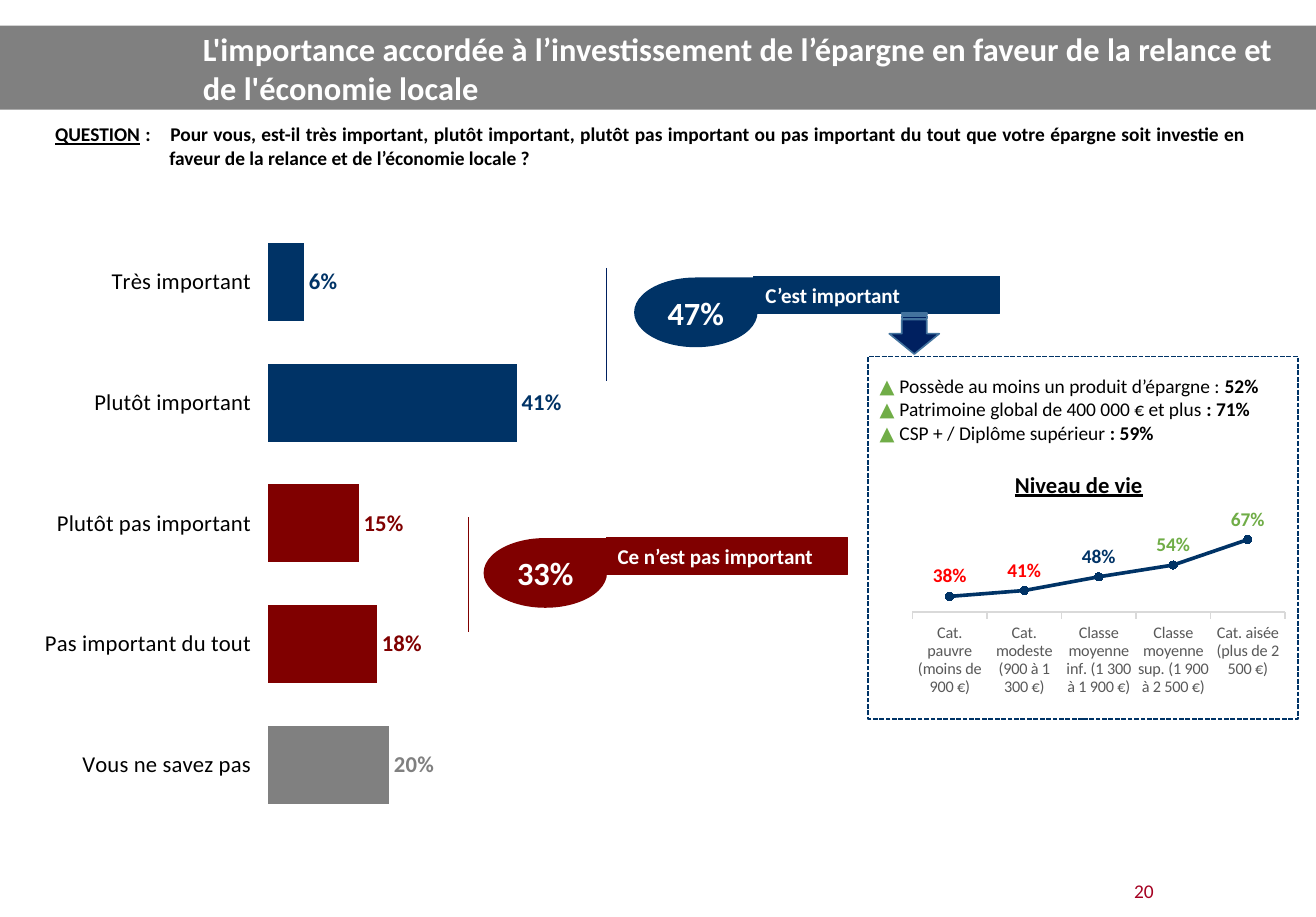
from lxml import etree
from pptx import Presentation
from pptx.chart.data import CategoryChartData
from pptx.dml.color import RGBColor
from pptx.enum.chart import XL_CHART_TYPE, XL_LABEL_POSITION, XL_MARKER_STYLE, XL_TICK_MARK
from pptx.enum.dml import MSO_LINE
from pptx.enum.shapes import MSO_CONNECTOR, MSO_SHAPE
from pptx.enum.text import MSO_ANCHOR, PP_ALIGN
from pptx.oxml.ns import qn
from pptx.util import Cm, Pt

BAR, LINE = XL_CHART_TYPE.BAR_CLUSTERED, XL_CHART_TYPE.LINE_MARKERS
OUTSIDE, ABOVE = XL_LABEL_POSITION.OUTSIDE_END, XL_LABEL_POSITION.ABOVE
CIRCLE, TICK_OUT, TICK_NONE = XL_MARKER_STYLE.CIRCLE, XL_TICK_MARK.OUTSIDE, XL_TICK_MARK.NONE
RECTANGLE, TEARDROP = MSO_SHAPE.RECTANGLE, MSO_SHAPE.TEAR
ARROW, STRAIGHT, DASH = MSO_SHAPE.STRIPED_RIGHT_ARROW, MSO_CONNECTOR.STRAIGHT, MSO_LINE.SQUARE_DOT
LEFT, CENTER, JUSTIFY = PP_ALIGN.LEFT, PP_ALIGN.CENTER, PP_ALIGN.JUSTIFY
TOP, MIDDLE = MSO_ANCHOR.TOP, MSO_ANCHOR.MIDDLE
NAVY, MAROON, GREY, GREEN, RED = "003366", "800000", "808080", "70AD47", "FF0000"
BLACK, WHITE = "000000", "FFFFFF"


def rgb(color):
    return RGBColor.from_string(color)


class SurveySlide:
    """Draws survey elements on one slide in a shared style."""

    def __init__(self, slide, font_name="Calibri"):
        self.slide = slide
        self.shapes = slide.shapes
        self.font_name = font_name

    def style_font(self, font, size, color, bold=False, underline=False, name=None):
        font.name = name or self.font_name
        font.size = Pt(size)
        font.bold = bold
        font.underline = underline
        font.color.rgb = rgb(color)

    def fill_text(self, shape, paragraphs, size, align=LEFT, anchor=TOP):
        frame = shape.text_frame
        frame.word_wrap = True
        frame.vertical_anchor = anchor
        for index, runs in enumerate(paragraphs):
            paragraph = frame.add_paragraph() if index else frame.paragraphs[0]
            paragraph.alignment = align
            for text, style in runs:
                run = paragraph.add_run()
                run.text = text
                self.style_font(run.font, size, **style)

    def text(self, box, paragraphs, size, align=LEFT, anchor=TOP):
        shape = self.shapes.add_textbox(*map(Cm, box))
        self.fill_text(shape, paragraphs, size, align, anchor)
        return shape.text_frame

    def shape(self, kind, box, fill, line=None, width=1):
        shape = self.shapes.add_shape(kind, *map(Cm, box))
        shape.shadow.inherit = False
        shape.fill.solid()
        shape.fill.fore_color.rgb = rgb(fill)
        if line:
            shape.line.color.rgb = rgb(line)
            shape.line.width = Pt(width)
        else:
            shape.line.fill.background()
        return shape

    def separator(self, x, top, bottom, color):
        connector = self.shapes.add_connector(STRAIGHT, Cm(x), Cm(top), Cm(x), Cm(bottom))
        connector.line.color.rgb = rgb(color)
        connector.line.width = Pt(0.5)
        etree.SubElement(connector._element.spPr, qn("a:effectLst"))

    def callout(self, label_box, label, drop_left, drop_top, total, color):
        style = dict(color=WHITE, bold=True)
        banner = self.shape(RECTANGLE, label_box, color, color, 0.75)
        self.fill_text(banner, [[(label, style)]], 13, anchor=MIDDLE)
        drop = self.shape(TEARDROP, (drop_left, drop_top, 2.69, 1.52), color)
        self.fill_text(drop, [[(total, style)]], 20, CENTER, MIDDLE)

    def chart(self, kind, box, data, layout, low, high, label_size, label_colors, position):
        chart_data = CategoryChartData(number_format="0%")
        chart_data.categories = [category for category, _ in data]
        chart_data.add_series("Series 1", [value for _, value in data])
        chart = self.shapes.add_chart(kind, *map(Cm, box), chart_data).chart
        self.style_font(chart.font, label_size, BLACK)
        chart.has_legend = chart.has_title = False
        self.place_plot(chart, layout)
        axis = chart.value_axis
        axis.visible = axis.has_major_gridlines = False
        axis.minimum_scale, axis.maximum_scale = low, high
        chart.category_axis.reverse_order = True
        chart.category_axis.major_tick_mark = TICK_OUT
        chart.category_axis.minor_tick_mark = TICK_NONE
        plot = chart.plots[0]
        plot.vary_by_categories = False
        series = plot.series[0]
        labels = series.data_labels
        labels.show_value = True
        labels.number_format, labels.number_format_is_linked = "0%", False
        labels.position = position
        self.style_font(labels.font, label_size, NAVY, True)
        for index, color in label_colors.items():
            label = series.points[index].data_label
            self.style_font(label.font, label_size, color, True)
            label.position = position
        return chart, plot, series

    def place_plot(self, chart, layout):
        area = chart._chartSpace.chart.plotArea
        for old in area.findall(qn("c:layout")):
            area.remove(old)
        element = etree.Element(qn("c:layout"))
        area.insert(0, element)
        manual = etree.SubElement(element, qn("c:manualLayout"))
        settings = [("layoutTarget", "inner"), ("xMode", "edge"), ("yMode", "edge")]
        for tag, value in settings + list(zip("xywh", layout)):
            etree.SubElement(manual, qn("c:" + tag)).set("val", str(value))

    def answer_chart(self, box, answers, colors):
        label_colors = {i: color for i, color in enumerate(colors) if color != NAVY}
        chart, plot, series = self.chart(
            BAR, box, answers, (0.3, 0, 0.62, 1), 0, 1, 14, label_colors, OUTSIDE)
        plot.gap_width = 55
        self.style_font(chart.category_axis.tick_labels.font, 14, BLACK)
        chart.category_axis.format.line.fill.background()
        for index, color in enumerate(colors):
            fill = series.points[index].format.fill
            fill.solid()
            fill.fore_color.rgb = rgb(color)

    def income_chart(self, box, incomes, label_colors):
        chart, plot, series = self.chart(
            LINE, box, incomes, (0.08, 0.17, 0.92, 0.38), 0.3, 0.7, 12, label_colors, ABOVE)
        self.style_font(chart.category_axis.tick_labels.font, 10, "595959")
        axis_line = chart.category_axis.format.line
        axis_line.color.rgb = rgb("D9D9D9")
        axis_line.width = Pt(0.75)
        series.smooth = False
        series.format.line.color.rgb = rgb(NAVY)
        series.format.line.width = Pt(2.25)
        marker = series.marker
        marker.style, marker.size = CIRCLE, 5
        marker.format.fill.solid()
        marker.format.fill.fore_color.rgb = rgb(NAVY)
        marker.format.line.color.rgb = rgb(NAVY)


def main():
    presentation = Presentation()
    presentation.slide_width, presentation.slide_height = Cm(28.68), Cm(19.99)
    page = SurveySlide(presentation.slides.add_slide(presentation.slide_layouts[6]))
    bold = dict(color=BLACK, bold=True)
    underlined = dict(bold, underline=True)

    page.shape(RECTANGLE, (0, 0.56, 28.68, 1.83), GREY)
    page.text((24.18, 19.05, 1.5, 0.76), [[("20", dict(color="A50021"))]], 12, CENTER)
    profile_box = page.shape(RECTANGLE, (18.92, 7.77, 9.37, 7.9), WHITE, NAVY)
    profile_box.line.dash_style = DASH
    title = ("L'importance accordée à l’investissement de l’épargne en faveur "
             "de la relance et de l'économie locale")
    page.text((4.17, 0.56, 24.08, 1.83), [[(title, dict(color=WHITE, bold=True))]], 20, anchor=MIDDLE)

    question = (" :\tPour vous, est-il très important, plutôt important, plutôt pas important "
                "ou pas important du tout que votre épargne soit investie en faveur de la "
                "relance et de l’économie locale ?")
    frame = page.text((0.97, 2.57, 27.1, 1.22),
                      [[("QUESTION", underlined), (question, bold)]], 12, JUSTIFY)
    frame.margin_left, frame.margin_right = Cm(0.23), Cm(0.91)
    frame.margin_top = frame.margin_bottom = Cm(0.1)
    properties = frame.paragraphs[0]._p.get_or_add_pPr()
    properties.set("marL", str(Cm(2.49)))
    properties.set("indent", str(-Cm(2.49)))

    answers = [("Très important ", 0.06), ("Plutôt important ", 0.41),
               ("Plutôt pas important ", 0.15), ("Pas important du tout ", 0.18),
               ("Vous ne savez pas ", 0.2)]
    page.answer_chart((-0.57, 4.83, 21.36, 13.16), answers, [NAVY, NAVY, MAROON, MAROON, GREY])

    page.separator(13.21, 5.84, 8.31, "002060")
    page.separator(10.21, 11.28, 13.77, MAROON)
    page.callout((16.43, 6.02, 5.36, 0.81), "C’est important", 13.82, 6.05, "47%", NAVY)
    page.callout((13.21, 11.71, 5.26, 0.81), "Ce n’est pas important", 10.54, 11.73, "33%", MAROON)

    incomes = [("Cat. aisée (plus de 2 500 €)", 0.67),
               ("Classe moyenne sup. (1 900 à 2 500 €)", 0.54),
               ("Classe moyenne inf. (1 300 à 1 900 €)", 0.48),
               ("Cat. modeste (900 à 1 300 €)", 0.41),
               ("Cat. pauvre (moins de 900 €)", 0.38)]
    page.income_chart((19.18, 10.87, 8.84, 4.5), incomes, {0: GREEN, 1: GREEN, 3: RED, 4: RED})

    profiles = [("Possède au moins un produit d’épargne : ", "52%"),
                ("Patrimoine global de 400 000 € et plus ", ": 71%"),
                ("CSP + / Diplôme supérieur ", ": 59%")]
    triangle = ("▲ ", dict(color=GREEN, name="Lato"))
    lines = [[triangle, (profile, dict(color=BLACK)), (share, bold)] for profile, share in profiles]
    page.text((18.92, 8.03, 9.37, 1.8), lines, 12)
    arrow = page.shape(ARROW, (19.48, 6.73, 0.89, 1.09), "002060", "43739E")
    arrow.rotation = 90
    page.text((21.87, 10.13, 6, 0.86), [[("Niveau de vie", underlined)]], 14)
    presentation.save("out.pptx")


if __name__ == "__main__":
    main()
